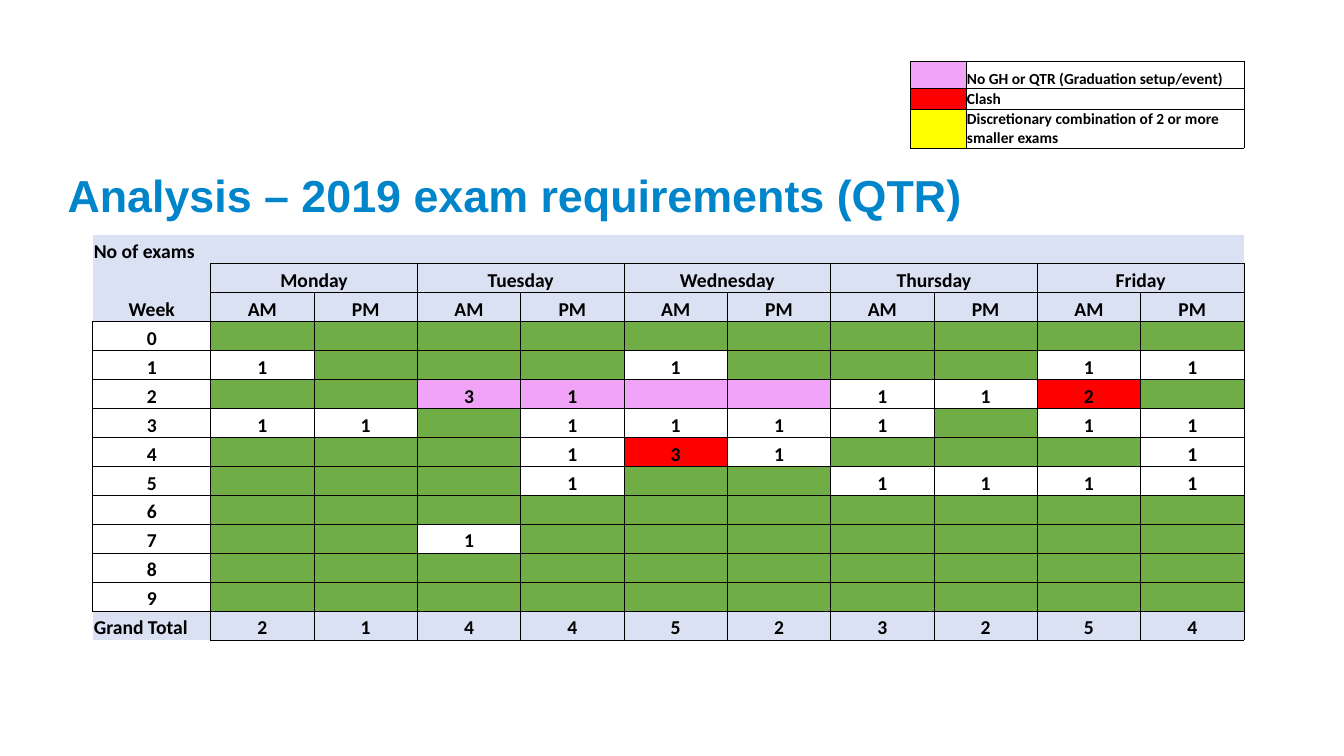
from lxml import etree
from pptx import Presentation
from pptx.dml.color import RGBColor
from pptx.enum.text import MSO_ANCHOR, PP_ALIGN
from pptx.oxml.ns import qn
from pptx.util import Inches, Pt

LEFT, CENTER = PP_ALIGN.LEFT, PP_ALIGN.CENTER
BOTTOM, MIDDLE = MSO_ANCHOR.BOTTOM, MSO_ANCHOR.MIDDLE
NO_STYLE = "{2D5ABB26-0587-4C30-8999-92F81FD0307C}"
SIDES = "LRTB"

COLORS = {
    "title": "0085CA",
    "text": "000000",
    "header": "D9E1F2",
    "free": "70AD47",
    "graduation": "F1A3F7",
    "clash": "FF0000",
    "combined": "FFFF00",
    "plain": "FFFFFF",
}
DAYS = ["Monday", "Tuesday", "Wednesday", "Thursday", "Friday"]
SLOTS = 2 * len(DAYS)
EXAMS = [
    "..........",
    "1...1...11",
    "..31..112.",
    "11.1111.11",
    "...131...1",
    "...1..1111".replace("1..1111", "1..1111"),
    "..........",
    "..1.......",
    "..........",
    "..........",
]
GRADUATION = [(2, slot) for slot in range(2, 6)]
LEGEND = [
    ("graduation", "No GH or QTR (Graduation setup/event)"),
    ("clash", "Clash"),
    ("combined", "Discretionary combination of 2 or more smaller exams"),
]


def rgb(name):
    return RGBColor.from_string(COLORS[name])


def add_run(p, text, size, font, color):
    r = p.add_run()
    r.text = text
    r.font.size = Pt(size)
    r.font.name = font
    r.font.bold = True
    r.font.color.rgb = rgb(color)


def add_title(s, text):
    tf = s.shapes.add_textbox(Inches(0.67), Inches(1.63), Inches(12), Inches(0.56)).text_frame
    tf.word_wrap = True
    tf.vertical_anchor = MIDDLE
    tf.margin_left = tf.margin_right = tf.margin_bottom = 0
    tf.margin_top = Inches(0.05)
    add_run(tf.paragraphs[0], text, 32, "Arial", "title")


def add_grid(s, left, top, widths, heights):
    sp = s.shapes.add_table(len(heights), len(widths), Inches(left), Inches(top),
                            Inches(sum(widths)), Inches(sum(heights)))
    table = sp.table
    table.first_row = table.horz_banding = False
    table._tbl.tblPr.find(qn("a:tableStyleId")).text = NO_STYLE
    for column, width in zip(table.columns, widths):
        column.width = Inches(width)
    for row, height in zip(table.rows, heights):
        row.height = Inches(height)
    return table


def set_borders(cell, sides):
    tcPr = cell._tc.get_or_add_tcPr()
    for side in SIDES:
        ln = etree.SubElement(tcPr, qn(f"a:ln{side}"), w=str(Pt(0.5)))
        if side in sides:
            fill = etree.SubElement(ln, qn("a:solidFill"))
            etree.SubElement(fill, qn("a:srgbClr"), val=COLORS["text"])
        else:
            etree.SubElement(ln, qn("a:noFill"))


def set_cell(cell, text, fill, size=14, align=CENTER, sides=SIDES):
    set_borders(cell, sides)
    cell.fill.solid()
    cell.fill.fore_color.rgb = rgb(fill)
    cell.vertical_anchor = BOTTOM
    cell.margin_left = cell.margin_right = cell.margin_top = Inches(0.01)
    cell.margin_bottom = 0
    p = cell.text_frame.paragraphs[0]
    p.alignment = align
    if text:
        add_run(p, text, size, "Calibri", "text")
    else:
        etree.SubElement(p._p, qn("a:endParaRPr"), sz=str(size * 100))


def slot_fill(week, slot, count):
    if (week, slot) in GRADUATION:
        return "graduation"
    if count == ".":
        return "free"
    return "clash" if int(count) > 1 else "plain"


def add_exam_table(s):
    label_width = 1.17
    widths = [label_width] + [(11.42 - label_width) / SLOTS] * SLOTS
    rows = len(EXAMS) + 4
    table = add_grid(s, 0.92, 2.33, widths, [4.02 / rows] * rows)
    total_row = rows - 1

    set_cell(table.cell(0, 0), "No of exams", "header", align=LEFT, sides="")
    set_cell(table.cell(1, 0), "", "header", sides="R")
    set_cell(table.cell(2, 0), "Week", "header", sides="RB")
    set_cell(table.cell(total_row, 0), "Grand Total", "header", align=LEFT, sides="TR")
    for week in range(len(EXAMS)):
        set_cell(table.cell(week + 3, 0), str(week), "plain")

    for slot in range(SLOTS):
        col = slot + 1
        day, afternoon = divmod(slot, 2)
        set_cell(table.cell(0, col), "", "header", sides="B")
        set_cell(table.cell(1, col), "" if afternoon else DAYS[day], "header")
        set_cell(table.cell(2, col), "PM" if afternoon else "AM", "header")
        for week, exams in enumerate(EXAMS):
            count = exams[slot]
            set_cell(table.cell(week + 3, col), count.strip("."), slot_fill(week, slot, count))
        total = sum(int(exams[slot]) for exams in EXAMS if exams[slot] != ".")
        set_cell(table.cell(total_row, col), str(total), "header")
        if afternoon:
            table.cell(1, col - 1).merge(table.cell(1, col))


def add_legend(s):
    table = add_grid(s, 9.03, 0.61, [0.55, 2.76], [0.27, 0.2, 0.39])
    for row, (fill, text) in enumerate(LEGEND):
        set_cell(table.cell(row, 0), "", fill, size=11)
        set_cell(table.cell(row, 1), text, "plain", size=11, align=LEFT)


def main():
    prs = Presentation()
    prs.slide_width, prs.slide_height = Inches(13.33), Inches(7.5)
    s = prs.slides.add_slide(prs.slide_layouts[6])
    add_title(s, "Analysis – 2019 exam requirements (QTR)")
    add_exam_table(s)
    add_legend(s)
    prs.save("out.pptx")


if __name__ == "__main__":
    main()
